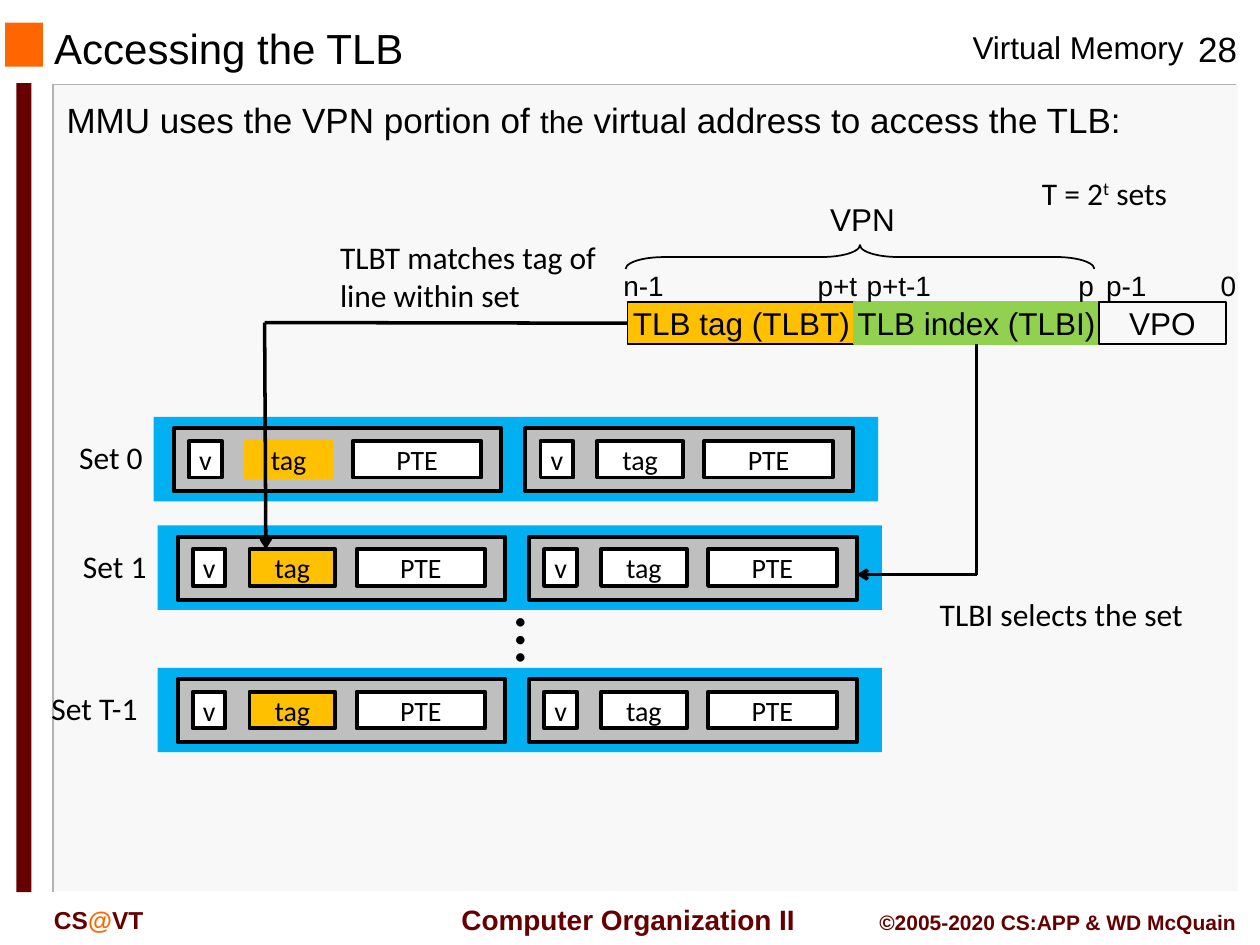
"""Build the slide on how the MMU accesses the TLB."""
import pptx
import pptx.dml.color
import pptx.enum.shapes
import pptx.enum.text
import pptx.oxml.ns
import pptx.util
from lxml import etree

Inches = pptx.util.Inches
Pt = pptx.util.Pt
SHAPES = pptx.enum.shapes.MSO_SHAPE
ALIGN = pptx.enum.text.PP_ALIGN
ANCHOR = pptx.enum.text.MSO_ANCHOR
FIT = pptx.enum.text.MSO_AUTO_SIZE

COLOURS = {
    "black": "000000", "white": "FFFFFF", "panel": "F8F8F8", "edge": "B2B2B2",
    "orange": "FF6600", "maroon": "660000", "amber": "FFC000",
    "green": "92D050", "blue": "00B0F0", "grey": "BFBFBF",
}
RGB = {name: pptx.dml.color.RGBColor.from_string(value) for name, value in COLOURS.items()}

deck = pptx.Presentation()
deck.slide_width, deck.slide_height = Inches(10), Inches(7.5)
page = deck.slides.add_slide(deck.slide_layouts[5])


def write(box, spans, size, font="Arial", colour="black", align=ALIGN.LEFT,
          anchor=ANCHOR.TOP, wrap=False, bold=False, fit=FIT.NONE):
    """Fill a box with one paragraph of (text, format changes) spans."""
    frame = {"word_wrap": wrap, "vertical_anchor": anchor, "auto_size": fit}
    for name, value in frame.items():
        setattr(box.text_frame, name, value)
    para = box.text_frame.paragraphs[0]
    para.alignment = align
    for text, changes in spans:
        span = para.add_run()
        span.text = text
        formats = {"name": font, "size": Pt(size), "bold": bold} | changes
        span.font.color.rgb = RGB[formats.pop("colour", colour)]
        baseline = formats.pop("baseline", None)
        for name, value in formats.items():
            setattr(span.font, name, value)
        if baseline:
            span.font._element.set("baseline", baseline)


def block(place, fill=None, line=None, width=1, kind=SHAPES.RECTANGLE):
    """Add a preset shape with the given fill and outline."""
    shape = page.shapes.add_shape(kind, *map(Inches, place))
    shape.shadow.inherit = False
    if fill:
        shape.fill.solid()
        shape.fill.fore_color.rgb = RGB[fill]
    else:
        shape.fill.background()
    if line:
        shape.line.color.rgb = RGB[line]
        shape.line.width = Pt(width)
    else:
        shape.line.fill.background()
    return shape


title = page.shapes.title
title.left, title.top, title.width, title.height = map(Inches, (0.33, 0.19, 6.33, 0.38))
write(title, [("Accessing the TLB", {})], 24, anchor=ANCHOR.MIDDLE, wrap=True)

block((0.43, 0.67, 9.4, 6.41), "panel")
block((0.04, 0.18, 0.3, 0.35), "orange")
block((0.13, 0.66, 0.12, 6.42), "maroon")
for colour, points in (
    ("edge", [(9.81, 0.67), (0.42, 0.67), (0.42, 7.08)]),
    ("white", [(9.83, 0.67), (9.83, 7.08), (0.44, 7.08)]),
):
    corners = [(Inches(x), Inches(y)) for x, y in points]
    builder = page.shapes.build_freeform(*corners[0], scale=1.0)
    builder.add_line_segments(corners[1:], close=False)
    edge = builder.convert_to_shape()
    edge.shadow.inherit = False
    edge.fill.background()
    edge.line.color.rgb = RGB[colour]
    edge.line.width = Pt(1)

centred = {"align": ALIGN.CENTER, "anchor": ANCHOR.MIDDLE}
fields = {}
for text, left, width, fill, line in (
    ("TLB tag (TLBT)", 4.98, 1.81, "amber", "black"),
    ("TLB index (TLBI)", 6.78, 1.94, "green", "green"),
    ("VPO", 8.72, 1.01, None, "black"),
):
    fields[text] = block((left, 2.4, width, 0.33), fill, line)
    write(fields[text], [(text, {})], 18, **centred)

brace = block((6.73, 0.18, 0.19, 3.72), None, "black", 1, SHAPES.LEFT_BRACE)
brace.rotation = 90
brace.adjustments[0], brace.adjustments[1] = 1.6, 0.5

for number, top, amber_line in ((0, 3.31, "amber"), (1, 4.17, "black"), ("T-1", 5.3, "black")):
    left = 1.22 if number == 0 else 1.25
    block((left, top, 5.75, 0.67), "blue")
    for way in range(2):
        start = left + 0.16 + 2.79 * way
        block((start, top + 0.09, 2.6, 0.5), "grey", "black", 2.25)
        tag_fill, tag_line = ("white", "black") if way else ("amber", amber_line)
        for text, offset, width, fill, line in (
            ("v", 0.12, 0.26, "white", "black"),
            ("tag", 0.57, 0.68, tag_fill, tag_line),
            ("PTE", 1.42, 1.02, "white", "black"),
        ):
            cell = block((start + offset, top + 0.19, width, 0.29), fill, line, 2.25)
            write(cell, [(text, {})], 16, "Calibri", **centred)

calibri = {"font": "Calibri"}
middle = {"anchor": ANCHOR.MIDDLE}
footer = {"colour": "maroon", "bold": True}
labels = [
    ((7.62, 0.17, 1.88, 0.4), [("Virtual Memory", {})], 18, {}),
    ((9.33, 0.17, 0.67, 0.43), [("28", {})], 20, {"align": ALIGN.CENTER, "wrap": True}),
    ((3.48, 7.11, 2.95, 0.37), [(" Computer Organization II", {})], 16, footer | centred),
    ((0.33, 7.13, 1.5, 0.33), [("CS", {}), ("@", {"colour": "orange"}), ("VT", {})], 14,
     footer | {"wrap": True}),
    ((6.83, 7.17, 3.08, 0.3), [("©2005-2020 CS:APP & WD McQuain", {})], 12,
     footer | {"align": ALIGN.RIGHT, "wrap": True}),
    ((0.43, 0.73, 8.64, 0.44),
     [("MMU uses the VPN portion of ", {}), ("the", {"size": Pt(18)}),
      (" virtual address to access the TLB:", {})], 20, {"wrap": True}),
    ((6.49, 1.54, 0.72, 0.4), [("VPN", {})], 18, middle),
    ((0.53, 3.43, 0.72, 0.4), [("Set 0", {})], 18, calibri),
    ((0.56, 4.29, 0.72, 0.4), [("Set 1", {})], 18, calibri),
    ((0.31, 5.42, 0.92, 0.4), [("Set T-1", {})], 18, calibri),
    ((8.17, 1.33, 1.25, 0.4), [("T = 2", {}), ("t", {"baseline": "30000"}), (" sets", {})], 18,
     calibri | {"wrap": True}),
    ((7.36, 4.67, 2.19, 0.4), [("TLBI selects the set", {})], 18, calibri),
    ((2.6, 1.84, 2.25, 0.71), [("TLBT matches tag of line within set", {})], 18,
     calibri | {"wrap": True}),
]
for text, left, width in (
    ("n-1", 4.85, 0.53), ("p+t", 6.39, 0.52), ("p+t-1", 6.78, 0.72),
    ("p", 8.46, 0.33), ("p-1", 8.68, 0.53), ("0", 9.59, 0.33),
):
    labels.append(((left, 2.08, width, 0.37), [(text, {})], 16, middle))
for place, spans, size, options in labels:
    box = page.shapes.add_textbox(*map(Inches, place))
    write(box, spans, size, fit=FIT.SHAPE_TO_FIT_TEXT, **options)

ellipsis = page.shapes.add_textbox(*map(Inches, (3.64, 4.69, 0.6, 0.77)))
ellipsis.rotation = 270
write(ellipsis, [("…", {})], 40, "Calibri", fit=FIT.SHAPE_TO_FIT_TEXT)

for start, end, source, side, arrow in (
    ((4.98, 2.57), (2.1, 2.56), "TLB tag (TLBT)", 1, False),
    ((2.1, 2.56), (2.11, 4.36), None, None, True),
    ((7.75, 2.73), (7.75, 4.56), "TLB index (TLBI)", 2, False),
    ((7.75, 4.56), (6.8, 4.56), None, None, True),
):
    link = page.shapes.add_connector(
        pptx.enum.shapes.MSO_CONNECTOR.STRAIGHT, *map(Inches, start + end))
    if source:
        link.begin_connect(fields[source], side)
    link.line.color.rgb = RGB["black"]
    link.line.width = Pt(2)
    if arrow:
        etree.SubElement(link.line._get_or_add_ln(), pptx.oxml.ns.qn("a:tailEnd"), type="arrow")
    etree.SubElement(link._element.spPr, pptx.oxml.ns.qn("a:effectLst"))

deck.save("out.pptx")
